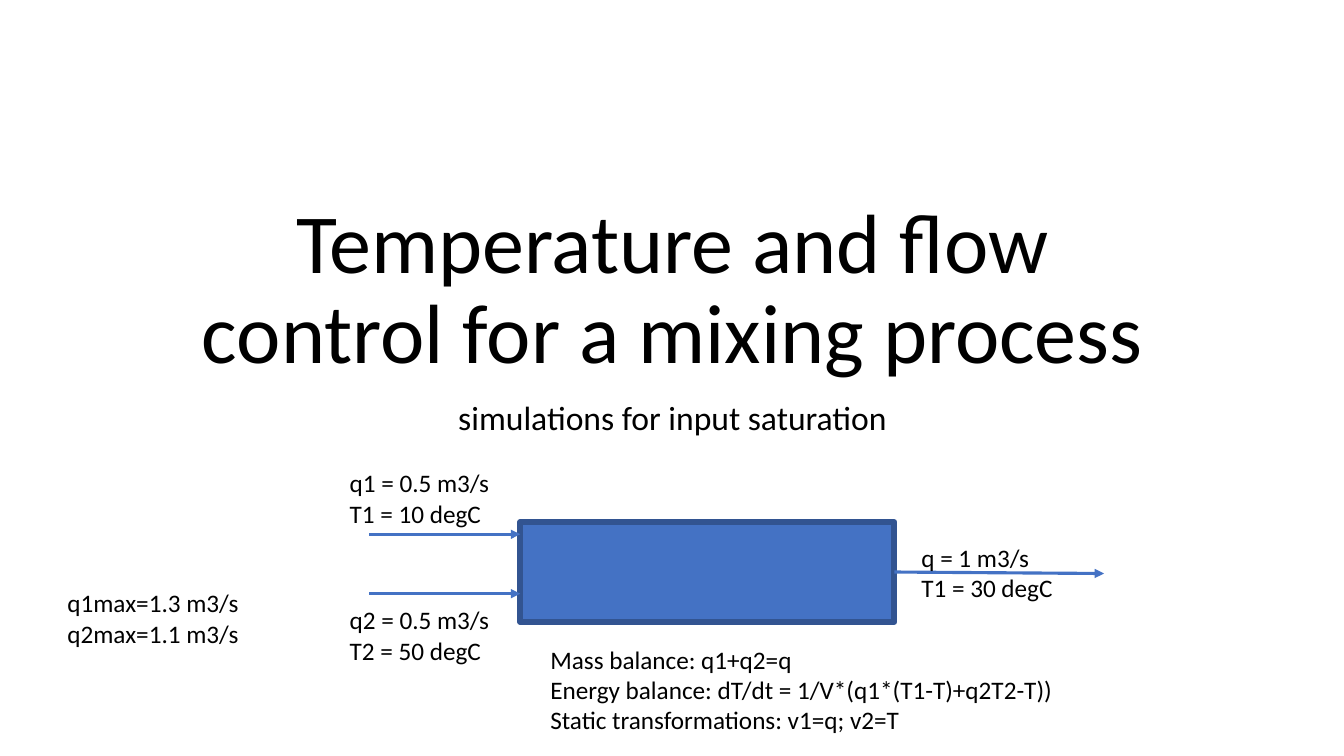
from dataclasses import dataclass

from lxml.etree import SubElement
from pptx import Presentation
from pptx.dml.color import RGBColor
from pptx.enum.shapes import MSO_CONNECTOR as Conn, MSO_SHAPE as Shp
from pptx.enum.text import MSO_ANCHOR as Anchor, MSO_AUTO_SIZE as Auto, PP_ALIGN as Align
from pptx.oxml.ns import qn
from pptx.shapes.autoshape import Shape
from pptx.shapes.connector import Connector
from pptx.slide import Slide
from pptx.util import Inches, Pt


@dataclass(frozen=True)
class Theme:
    font: str = "Calibri"
    text: RGBColor = RGBColor(0x00, 0x00, 0x00)
    accent: RGBColor = RGBColor(0x44, 0x72, 0xC4)
    outline: RGBColor = RGBColor(0x32, 0x54, 0x91)
    title_size: float = 60
    subtitle_size: float = 24
    body_size: float = 18
    outline_width: float = 4.5
    arrow_width: float = 2.25


@dataclass(frozen=True)
class Box:
    left: float
    top: float
    width: float
    height: float


@dataclass(frozen=True)
class Label:
    box: Box
    lines: tuple[str, ...]


@dataclass(frozen=True)
class Arrow:
    x1: float
    y1: float
    x2: float
    y2: float


THEME = Theme()
TITLE = Box(1.67, 1.23, 10, 2.61)
SUBTITLE = Box(1.67, 3.93, 10, 1.81)
TANK = Box(5.16, 5.18, 3.71, 0.99)
TANK_RIGHT = TANK.left + TANK.width
INFLOWS = [Arrow(TANK.left - 1.5, y, TANK.left, y) for y in (5.3, 5.89)]
OUTFLOW = Arrow(TANK_RIGHT, 5.68, 10.95, 5.69)
LABELS = [
    Label(Box(3.37, 4.59, 1.9, 0.71), ("q1 = 0.5 m3/s", "T1 = 10 degC")),
    Label(Box(3.37, 5.95, 1.9, 0.71), ("q2 = 0.5 m3/s", "T2 = 50 degC")),
    Label(Box(9.04, 5.33, 1.9, 0.71), ("q = 1 m3/s", "T1 = 30 degC")),
    Label(Box(5.36, 6.34, 6.1, 1.01), (
        "Mass balance: q1+q2=q",
        "Energy balance: dT/dt = 1/V*(q1*(T1-T)+q2T2-T))",
        "Static transformations: v1=q; v2=T",
    )),
    Label(Box(0.57, 5.78, 1.99, 0.71), ("q1max=1.3 m3/s", "q2max=1.1 m3/s")),
]


def to_inches(box: Box) -> tuple[Inches, Inches, Inches, Inches]:
    return Inches(box.left), Inches(box.top), Inches(box.width), Inches(box.height)


def add_text(slide: Slide, box: Box, *lines: str, size: float = THEME.body_size,
             align: Align = Align.LEFT, anchor: Anchor = Anchor.TOP,
             spacing: float = 1.0, before: float = 0,
             auto_size: Auto = Auto.NONE) -> Shape:
    sp = slide.shapes.add_textbox(*to_inches(box))
    tf = sp.text_frame
    tf.word_wrap = True
    tf.auto_size = auto_size
    tf.vertical_anchor = anchor
    for i, line in enumerate(lines):
        p = tf.add_paragraph() if i else tf.paragraphs[0]
        p.alignment = align
        p.line_spacing = spacing
        p.space_before = Pt(before)
        r = p.add_run()
        r.text = line
        r.font.name = THEME.font
        r.font.size = Pt(size)
        r.font.color.rgb = THEME.text
    return sp


def add_tank(slide: Slide) -> Shape:
    sp = slide.shapes.add_shape(Shp.RECTANGLE, *to_inches(TANK))
    sp.shadow.inherit = False
    sp.fill.solid()
    sp.fill.fore_color.rgb = THEME.accent
    sp.line.color.rgb = THEME.outline
    sp.line.width = Pt(THEME.outline_width)
    return sp


def add_arrow(slide: Slide, arrow: Arrow) -> Connector:
    cx = slide.shapes.add_connector(Conn.STRAIGHT, Inches(arrow.x1), Inches(arrow.y1),
                                    Inches(arrow.x2), Inches(arrow.y2))
    cx.line.color.rgb = THEME.accent
    cx.line.width = Pt(THEME.arrow_width)
    SubElement(cx.line._get_or_add_ln(), qn("a:tailEnd"), type="triangle")
    SubElement(cx._element.spPr, qn("a:effectLst"))
    return cx


def main() -> None:
    prs = Presentation()
    prs.slide_width, prs.slide_height = Inches(13.33), Inches(7.5)
    slide = prs.slides.add_slide(prs.slide_layouts[6])

    add_text(slide, TITLE, "Temperature and flow control for a mixing process",
             size=THEME.title_size, align=Align.CENTER, anchor=Anchor.BOTTOM, spacing=0.9)
    add_text(slide, SUBTITLE, "simulations for input saturation",
             size=THEME.subtitle_size, align=Align.CENTER, spacing=0.9, before=10)

    tank = add_tank(slide)
    for inflow in INFLOWS:
        add_arrow(slide, inflow)
    add_arrow(slide, OUTFLOW).begin_connect(tank, 3)

    for label in LABELS:
        add_text(slide, label.box, *label.lines, auto_size=Auto.SHAPE_TO_FIT_TEXT)

    prs.save("out.pptx")


if __name__ == "__main__":
    main()
